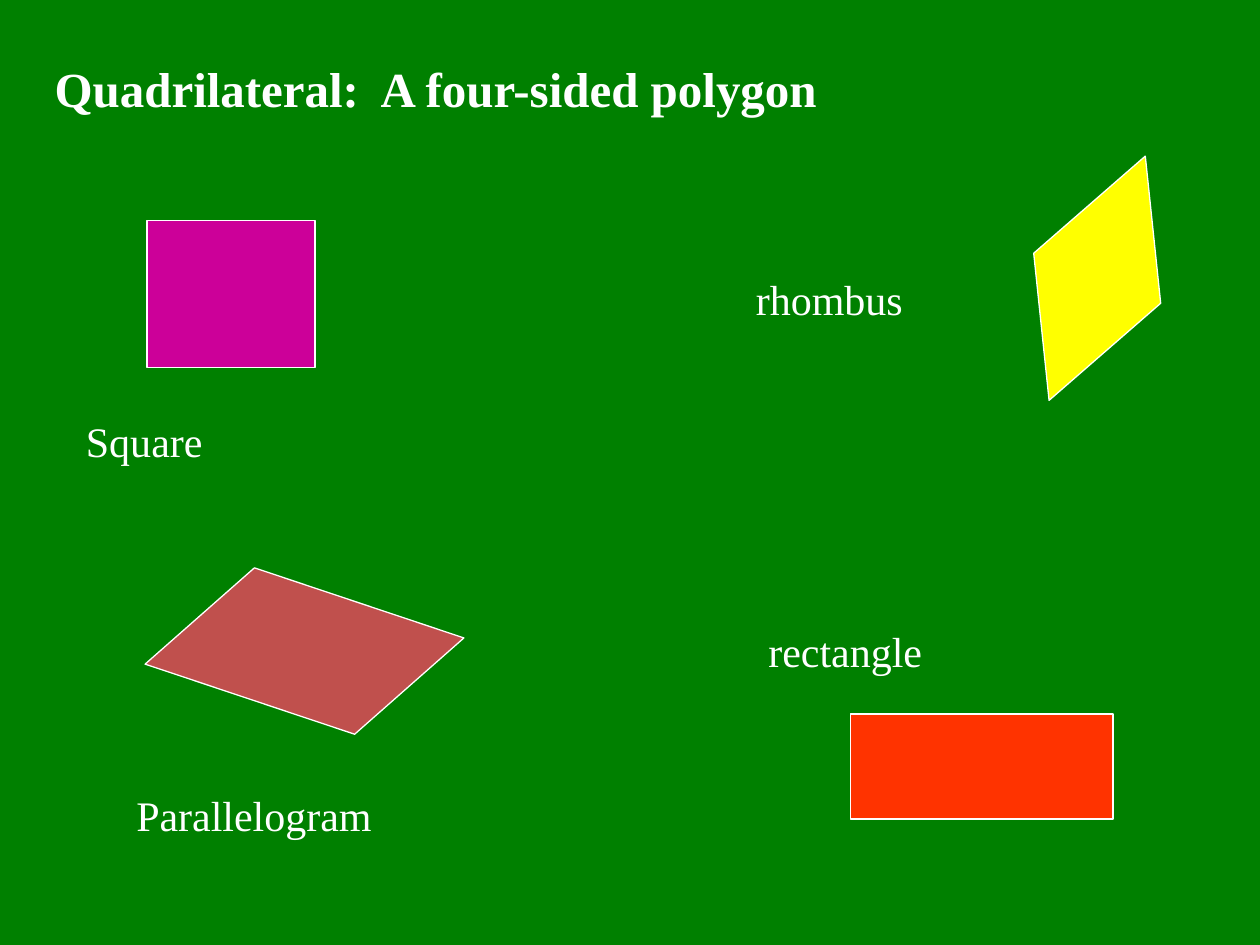
from pptx import Presentation
from pptx import util as u
from pptx.dml.color import RGBColor
from pptx.enum import shapes, text

COLS, ROWS = 120, 90
KIND = shapes.MSO_SHAPE
THEME = {
    "back": "008000", "ink": "FFFFFF", "font": "Times New Roman",
    "title": 28, "label": 24, "line": 0.75,
}
TITLE = ("Quadrilateral:  A four-sided polygon", (4, 5, 85, 12.4))
LABELS = [
    ("Square", (7, 39, 20, 6), True),
    ("rectangle", (72, 59, 26.3, 6), True),
    ("rhombus", (70.8, 25.5, 22, 6), False),
    ("Parallelogram", (11.8, 74.6, 37.7, 6), False),
]
FIGURES = [
    (KIND.RECTANGLE, (81, 68, 25, 10), "FF3300", 0, []),
    (KIND.DIAMOND, (92, 20, 25, 13), "FFFF00", 291.5, []),
    (KIND.PARALLELOGRAM, (15, 56, 28, 12), "C0504D", 198.5, [0.58]),
    (KIND.RECTANGLE, (14, 21, 16, 14), "CC0099", 0, []),
]


def apply(item, values):
    for name, value in values.items():
        setattr(item, name, value)


def paint(fill, color):
    fill.solid()
    fill.fore_color.rgb = RGBColor.from_string(color)


def place(grid):
    left, top, wide, high = grid
    return (int(left * deck.slide_width / COLS), int(top * deck.slide_height / ROWS),
            int(wide * deck.slide_width / COLS), int(high * deck.slide_height / ROWS))


def write(box, words, size, bold=False, wrap=True):
    frame = box.text_frame
    frame.text = words
    apply(frame, {
        "word_wrap": wrap,
        "auto_size": text.MSO_AUTO_SIZE.NONE,
        "vertical_anchor": text.MSO_ANCHOR.TOP,
    })
    para = frame.paragraphs[0]
    para.alignment = text.PP_ALIGN.LEFT
    font = para.runs[0].font
    apply(font, {"name": THEME["font"], "size": u.Pt(size), "bold": bold})
    paint(font.fill, THEME["ink"])


deck = Presentation()
apply(deck, {"slide_width": u.Inches(10), "slide_height": u.Inches(7.5)})
slide = deck.slides.add_slide(deck.slide_layouts[5])
paint(slide.background.fill, THEME["back"])

words, grid = TITLE
head = slide.shapes.title
apply(head, dict(zip(("left", "top", "width", "height"), place(grid))))
write(head, words, THEME["title"], bold=True)

for words, grid, wrap in LABELS:
    write(slide.shapes.add_textbox(*place(grid)), words, THEME["label"], wrap=wrap)

for kind, grid, color, turn, adjust in FIGURES:
    shape = slide.shapes.add_shape(kind, *place(grid))
    shape.shadow.inherit = False
    shape.rotation = turn
    for index, value in enumerate(adjust):
        shape.adjustments[index] = value
    paint(shape.fill, color)
    paint(shape.line.fill, THEME["ink"])
    shape.line.width = u.Pt(THEME["line"])

deck.save("out.pptx")
